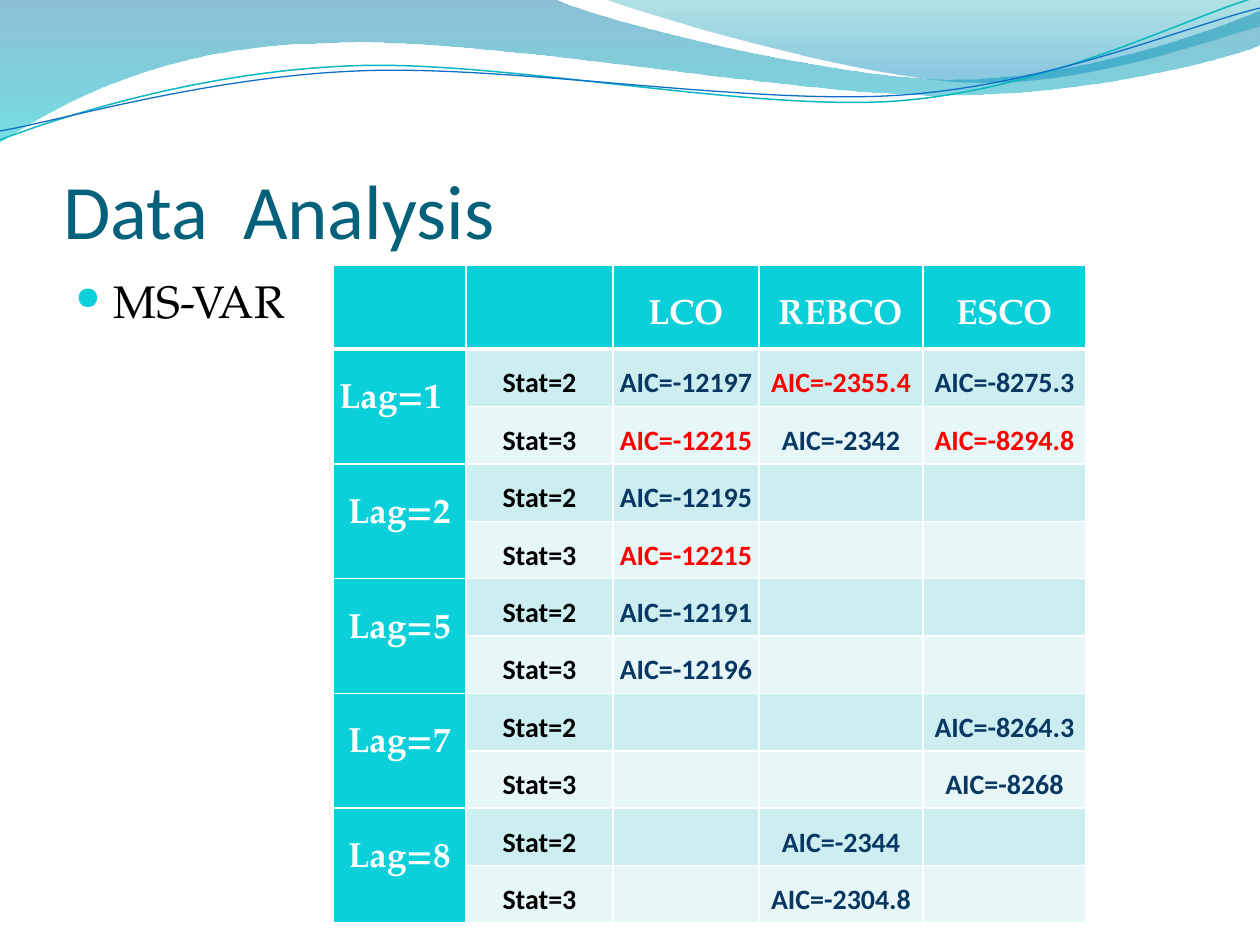
from dataclasses import dataclass
from math import cos, radians, sin
from typing import Any, NamedTuple

from lxml.etree import SubElement
from pptx import Presentation
from pptx.dml.color import RGBColor as RGB
from pptx.enum.text import MSO_ANCHOR as Anchor, PP_ALIGN as Align
from pptx.oxml import parse_xml
from pptx.oxml.ns import nsdecls, qn
from pptx.util import Emu, Pt

SCALE = 914400 / 126  # EMU in one px


def px(length: float) -> Emu:
    return Emu(round(length * SCALE))


@dataclass(frozen=True)
class Theme:
    heading: str = "04617B"
    accent: str = "0BD0D9"
    text: str = "000000"
    light: str = "FFFFFF"
    figure: str = "083763"
    best: str = "FF0000"
    bands: tuple = ("CCEEF1", "E7F7F8")
    sans: str = "Calibri"
    serif: str = "TeX Gyre Pagella"
    title_size: int = 44
    bullet_size: int = 26
    label_size: int = 20
    cell_size: int = 16


THEME = Theme()


class Stop(NamedTuple):
    position: float
    color: str
    opacity: int


class Wave(NamedTuple):
    start: tuple
    segments: list  # two numbers make a line, six make a Bézier curve
    stops: tuple = ()
    line: tuple = ()  # colour and points
    tilt: float = 0  # degrees


class Lag(NamedTuple):
    name: str
    figures: list  # one row per number of states: LCO, REBCO, ESCO


WAVES = [
    Wave((0, 0), [(554, -1), (600, 21, 837, 79, 955, 79), (1075, 79, 1207, 33, 1260, 11),
                  (1261, 45), (1239, 55, 1096, 96, 940, 95), (784, 95, 481, 35, 324, 43),
                  (163, 45, 58, 105, -1, 142), (0, 0)],
         stops=(Stop(0, "0074A1", 45), Stop(1, "00C6CF", 55))),
    Wave((604, -1), [(641, 14, 859, 78, 969, 82), (1079, 87, 1211, 40, 1260, 26), (1260, 0),
                     (604, -1)],
         stops=(Stop(0, "00A1A9", 30), Stop(0.8, "008BBF", 45))),
    Wave((0, 140), [(60, 117, 199, 72, 349, 66), (498, 59, 747, 112, 898, 101),
                    (1050, 89, 1182, 19, 1257, -3)], line=("0AB8BF", 0.85), tilt=-2.7),
    Wave((0, 131), [(59, 121, 207, 77, 357, 71), (508, 64, 752, 106, 903, 95),
                    (1053, 84, 1186, 26, 1260, 8)], line=("0F6FC6", 0.75), tilt=-2.7),
]
PIVOT = (629, 73)  # centre of the tilted waves
MARKETS = ["LCO", "REBCO", "ESCO"]
STATES = ["Stat=2", "Stat=3"]
LAGS = [
    Lag("Lag=1  ", [["-12197", "-2355.4", "-8275.3"], ["-12215", "-2342", "-8294.8"]]),
    Lag("Lag=2", [["-12195", "", ""], ["-12215", "", ""]]),
    Lag("Lag=5", [["-12191", "", ""], ["-12196", "", ""]]),
    Lag("Lag=7", [["", "", "-8264.3"], ["", "", "-8268"]]),
    Lag("Lag=8", [["", "-2344", ""], ["", "-2304.8", ""]]),
]
BEST = {"-12215", "-2355.4", "-8294.8"}
COLUMNS = [133, 147, 146, 164, 163]
HEADER_HEIGHT, BODY_HEIGHT, TABLE_HEIGHT = 45, 574, 658


def apply(target: Any, values: dict) -> None:
    for name, value in values.items():
        setattr(target, name, value)


def write(paragraph: Any, text: str, size: int, face: str, color: str, bold: bool = False) -> None:
    run = paragraph.add_run()
    run.text = text
    apply(run.font, {"size": Pt(size), "name": face, "bold": bold})
    run.font.color.rgb = RGB.from_string(color)


def turn(point: tuple, degrees: float) -> tuple:
    x, y = point[0] - PIVOT[0], point[1] - PIVOT[1]
    c, s = cos(radians(degrees)), sin(radians(degrees))
    return PIVOT[0] + x * c - y * s, PIVOT[1] + x * s + y * c


def curve_segments(shape: Any, segments: list) -> None:
    """Join each three points of a curved segment into one Bézier curve."""
    steps = iter(list(shape._element.iter(qn("a:lnTo"))))
    for segment in segments:
        step = next(steps)
        if len(segment) == 6:
            step.addprevious(parse_xml(f'<a:cubicBezTo {nsdecls("a")}/>'))
            curve = step.getprevious()
            for part in (step, next(steps), next(steps)):
                curve.append(part[0])
                part.getparent().remove(part)


def draw_wave(shapes: Any, wave: Wave) -> None:
    points = [wave.start] + [segment[k:k + 2] for segment in wave.segments
                             for k in range(0, len(segment), 2)]
    fine = 100  # freeform units in one px
    units = [tuple(round(v * fine) for v in turn(point, -wave.tilt)) for point in points]
    builder = shapes.build_freeform(*units[0], scale=SCALE / fine)
    builder.add_line_segments(units[1:], close=bool(wave.stops))
    shape = builder.convert_to_shape()
    curve_segments(shape, wave.segments)
    shape.rotation = wave.tilt
    shape.shadow.inherit = False
    if wave.line:
        color, width = wave.line
        shape.fill.background()
        shape.line.width = Pt(width)
        shape.line.color.rgb = RGB.from_string(color)
        return
    shape.line.fill.background()
    shape.fill.gradient()
    shape.fill.gradient_angle = 270
    for stop, wanted in zip(shape.fill.gradient_stops, wave.stops):
        stop.position = wanted.position
        stop.color.rgb = RGB.from_string(wanted.color)
    for color, wanted in zip(shape.fill._xPr.iter(qn("a:srgbClr")), wave.stops):
        SubElement(color, qn("a:alpha"), val=str(wanted.opacity * 1000))


def draw_bullet(shapes: Any, text: str) -> None:
    box = shapes.add_textbox(px(63), px(267), px(1134), px(605))
    box.text_frame.word_wrap = True
    topic = box.text_frame.paragraphs[0]
    topic.space_before = Pt(THEME.bullet_size * 0.2)
    write(topic, text, THEME.bullet_size, THEME.serif, THEME.text)
    props = topic._p.get_or_add_pPr()
    for name, indent in {"marL": px(38), "indent": px(-38)}.items():
        props.set(name, str(int(indent)))
    color = SubElement(props, qn("a:buClr"))
    SubElement(color, qn("a:srgbClr"), val=THEME.accent)
    SubElement(props, qn("a:buSzPct"), val="70000")
    SubElement(props, qn("a:buChar"), char="●")


def style_cell(cell: Any, fill: str, top: int = 1, bottom: int = 1) -> None:
    cell.fill.solid()
    cell.fill.fore_color.rgb = RGB.from_string(fill)
    props = cell._tc.get_or_add_tcPr()
    for place, (side, width) in enumerate({"L": 1, "R": 1, "T": top, "B": bottom}.items()):
        props.insert(place, parse_xml(
            f'<a:ln{side} {nsdecls("a")} w="{Pt(width)}"><a:solidFill>'
            f'<a:srgbClr val="{THEME.light}"/></a:solidFill></a:ln{side}>'))


def fill_cell(cell: Any, text: str, spacing: float, size: int, face: str, color: str) -> None:
    if not text:
        return
    apply(cell, {"margin_left": px(4), "margin_right": px(4), "margin_top": 0, "margin_bottom": 0})
    paragraph = cell.text_frame.paragraphs[0]
    apply(paragraph, {"alignment": Align.CENTER, "line_spacing": spacing})
    write(paragraph, text, size, face, color, bold=True)


def draw_table(shapes: Any) -> None:
    count = len(LAGS) * len(STATES)
    frame = shapes.add_table(count + 1, len(COLUMNS), px(333), px(265), px(sum(COLUMNS)),
                             px(TABLE_HEIGHT))
    table = frame.table
    table.horz_banding = False
    for column, width in zip(table.columns, COLUMNS):
        column.width = px(width)
    for index, row in enumerate(table.rows):
        row.height = px(BODY_HEIGHT / count if index else HEADER_HEIGHT)
        for place, cell in enumerate(row.cells):
            band = THEME.accent if index == 0 or place == 0 else THEME.bands[(index - 1) % 2]
            style_cell(cell, band, top=3 if index == 1 else 1, bottom=1 if index else 3)
    frame.height = px(TABLE_HEIGHT)

    label = (2.0, THEME.label_size, THEME.serif, THEME.light)
    plain = (1.5, THEME.cell_size, THEME.sans)
    for place, market in enumerate(MARKETS, start=2):
        fill_cell(table.cell(0, place), market, *label)
    for group, lag in enumerate(LAGS):
        first = 1 + group * len(STATES)
        table.cell(first, 0).merge(table.cell(first + len(STATES) - 1, 0))
        fill_cell(table.cell(first, 0), lag.name, *label)
        for index, (state, figures) in enumerate(zip(STATES, lag.figures), start=first):
            fill_cell(table.cell(index, 1), state, *plain, THEME.text)
            for place, figure in enumerate(figures, start=2):
                color = THEME.best if figure in BEST else THEME.figure
                fill_cell(table.cell(index, place), figure and f"AIC={figure}", *plain, color)


def main() -> None:
    deck = Presentation()
    apply(deck, {"slide_width": px(1260), "slide_height": px(945)})
    shapes = deck.slides.add_slide(deck.slide_layouts[5]).shapes

    # Wave decoration, behind the title
    title = shapes.title
    for wave in WAVES:
        draw_wave(shapes, wave)
    shapes._spTree.append(title._element)

    # Title
    apply(title, {"left": px(63), "top": px(98), "width": px(1134), "height": px(157)})
    apply(title.text_frame, {"vertical_anchor": Anchor.BOTTOM, "margin_left": 0,
                             "margin_right": 0, "margin_bottom": 0})
    heading = title.text_frame.paragraphs[0]
    heading.alignment = Align.LEFT
    write(heading, "Data  Analysis", THEME.title_size, THEME.sans, THEME.heading)

    # Topic and its results
    draw_bullet(shapes, "MS-VAR")
    draw_table(shapes)
    deck.save("out.pptx")


if __name__ == "__main__":
    main()
